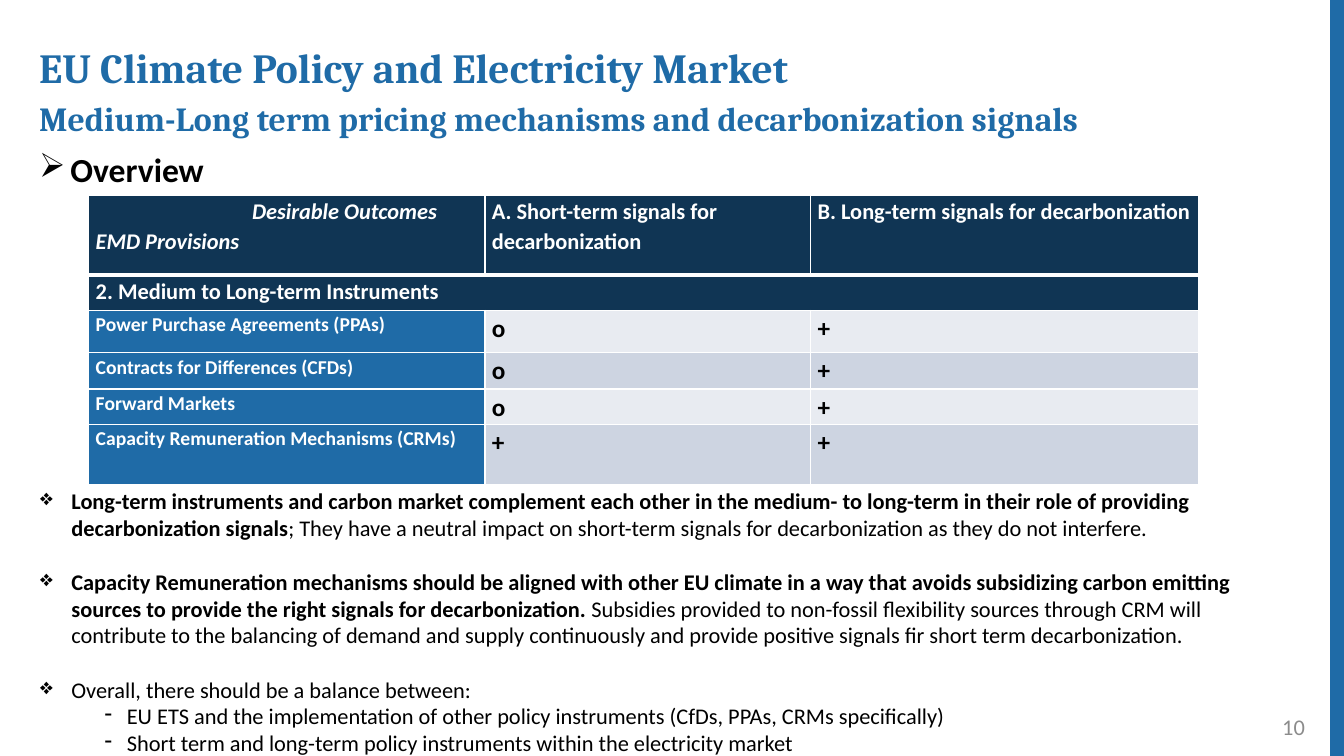
import pptx
import pptx.util
import pptx.dml.color
import pptx.enum.text
import pptx.enum.shapes
import pptx.oxml
import pptx.oxml.ns

Inches = pptx.util.Inches
Pt = pptx.util.Pt
ALIGN = pptx.enum.text.PP_ALIGN
ANCHOR = pptx.enum.text.MSO_ANCHOR

TITLE = [("EU Climate Policy and Electricity Market", 29.6),
         ("Medium-Long term pricing mechanisms and decarbonization signals", 24.1)]
TOPIC = "Overview"
PAGE = "10"
CORNER = ["Desirable Outcomes", "EMD Provisions"]
HEADS = ["A. Short-term signals for decarbonization",
         "B. Long-term signals for decarbonization"]
GROUP = "2. Medium to Long-term Instruments"
ROWS = [("Power Purchase Agreements (PPAs)", "o", "+"),
        ("Contracts for Differences (CFDs)", "o", "+"),
        ("Forward Markets", "o", "+"),
        ("Capacity Remuneration Mechanisms (CRMs)", "+", "+")]
POINTS = [
    ("Long-term instruments and carbon market complement each other in the medium- to long-term "
     "in their role of providing decarbonization signals",
     "; They have a neutral impact on short-term signals for decarbonization as they do not interfere."),
    ("Capacity Remuneration mechanisms should be aligned with other EU climate in a way that avoids "
     "subsidizing carbon emitting sources to provide the right signals for decarbonization.",
     " Subsidies provided to non-fossil flexibility sources through CRM will contribute to the balancing "
     "of demand and supply continuously and provide positive signals fir short term decarbonization."),
    ("", "Overall, there should be a balance between:"),
]
ITEMS = ["EU ETS and the implementation of other policy instruments (CfDs, PPAs, CRMs specifically)",
         "Short term and long-term policy instruments within the electricity market"]

COLS = [3.93, 3.23, 3.85]
TALL = [0.79, 0.35, 0.42, 0.36, 0.35, 0.6]

THEME = {"blue": "1F6BA7", "navy": "103554", "white": "FFFFFF", "black": "000000",
         "gray": "8C8C8C", "bands": ["E8EBF1", "CDD4E1"],
         "head": "Cambria", "body": "Calibri",
         "topic": 24, "text": 16, "label": 14, "mark": 18}


def color(name):
    return pptx.dml.color.RGBColor.from_string(THEME.get(name, name))


def make(tag, **attrs):
    node = pptx.oxml.parse_xml(f"<a:{tag} {pptx.oxml.ns.nsdecls('a')}/>")
    for key, value in attrs.items():
        node.set(key, str(value))
    return node


def write(frame, runs, size=THEME["text"], ink="black", font="body", bold=False, slant=False,
          bullet=None, left=0, hang=0, lines=None, before=None, after=None, align=ALIGN.LEFT):
    fresh = not frame.paragraphs[0].runs
    para = frame.paragraphs[0] if fresh else frame.add_paragraph()
    para.alignment = align
    if lines:
        para.line_spacing = lines
    if before and not fresh:
        para.space_before = Pt(before)
    if after:
        para.space_after = Pt(after)
    props = para._p.get_or_add_pPr()
    if left:
        props.set("marL", str(Inches(left)))
        props.set("indent", str(-Inches(hang)))
    if bullet:
        props.append(make("buChar", char=bullet))
    parts = [(runs, bold)] if isinstance(runs, str) else runs
    for words, heavy in parts:
        run = para.add_run()
        run.text = words
        run.font.size = Pt(size)
        run.font.name = THEME[font]
        run.font.bold = heavy
        run.font.italic = slant
        run.font.color.rgb = color(ink)


def box(slide, left, top, width, height, anchor=ANCHOR.TOP):
    frame = slide.shapes.add_textbox(*map(Inches, (left, top, width, height))).text_frame
    frame.word_wrap = True
    frame.vertical_anchor = anchor
    return frame


def paint(cell, fill, low=1):
    cell.fill.solid()
    cell.fill.fore_color.rgb = color(fill)
    cell.margin_left = cell.margin_right = Inches(0.07)
    cell.margin_top = Inches(0.01)
    cell.margin_bottom = 0
    props = cell._tc.get_or_add_tcPr()
    for spot, (side, width) in enumerate({"lnL": 1, "lnR": 1, "lnT": 1, "lnB": low}.items()):
        edge = make(side, w=Pt(width))
        solid = make("solidFill")
        solid.append(make("srgbClr", val=THEME["white"]))
        edge.append(solid)
        props.insert(spot, edge)


def grid(slide):
    table = slide.shapes.add_table(len(TALL), len(COLS), Inches(0.88), Inches(1.94),
                                   Inches(sum(COLS)), Inches(sum(TALL))).table
    for col, width in zip(table.columns, COLS):
        col.width = Inches(width)
    for row, height in zip(table.rows, TALL):
        row.height = Inches(height)
    style = {"ink": "white", "bold": True, "lines": 1.07}
    for col in range(len(COLS)):
        paint(table.cell(0, col), "navy", 3)
        paint(table.cell(1, col), "navy")
    corner = table.cell(0, 0).text_frame
    for words, left in zip(CORNER, (1.55, 0)):
        write(corner, words, slant=True, left=left, **style)
    for col, words in enumerate(HEADS, 1):
        write(table.cell(0, col).text_frame, words, **style)
    table.cell(1, 0).merge(table.cell(1, len(COLS) - 1))
    write(table.cell(1, 0).text_frame, GROUP, after=8, **style)
    for num, row in enumerate(ROWS):
        band = THEME["bands"][num % 2]
        for col, words in enumerate(row):
            cell = table.cell(num + 2, col)
            paint(cell, band if col else "blue")
            write(cell.text_frame, words, size=THEME["mark" if col else "label"],
                  ink="black" if col else "white", bold=True, lines=1.07, after=8)


def main():
    deck = pptx.Presentation()
    deck.slide_width, deck.slide_height = Inches(13.33), Inches(7.5)
    slide = deck.slides.add_slide(deck.slide_layouts[6])

    bar = slide.shapes.add_connector(pptx.enum.shapes.MSO_CONNECTOR.STRAIGHT,
                                     Inches(13.27), 0, Inches(13.27), Inches(7.5))
    bar.line.color.rgb = color("blue")
    bar.line.width = Pt(12)
    bar._element.spPr.append(make("effectLst"))

    write(box(slide, 10.04, 7.01, 3, 0.4, ANCHOR.MIDDLE), PAGE, ink="gray", align=ALIGN.RIGHT)

    title = box(slide, 0.29, 0.46, 11.96, 1.01)
    for words, size in TITLE:
        write(title, words, size=size, ink="blue", font="head", bold=True, lines=0.8, before=10)

    write(box(slide, 0.29, 1.35, 11.02, 0.63), TOPIC, size=THEME["topic"], bold=True,
          bullet="➢", left=0.31, hang=0.31, lines=1.2)

    notes = box(slide, 0.3, 4.78, 12.49, 2.79)
    for strong, plain in POINTS:
        runs = [(words, heavy) for words, heavy in ((strong, True), (plain, False)) if words]
        write(notes, runs, bullet="❖", left=0.31, hang=0.31, before=19.5)
    for words in ITEMS:
        write(notes, words, bullet="-", left=0.86, hang=0.22)

    grid(slide)
    deck.save("out.pptx")


if __name__ == "__main__":
    main()
